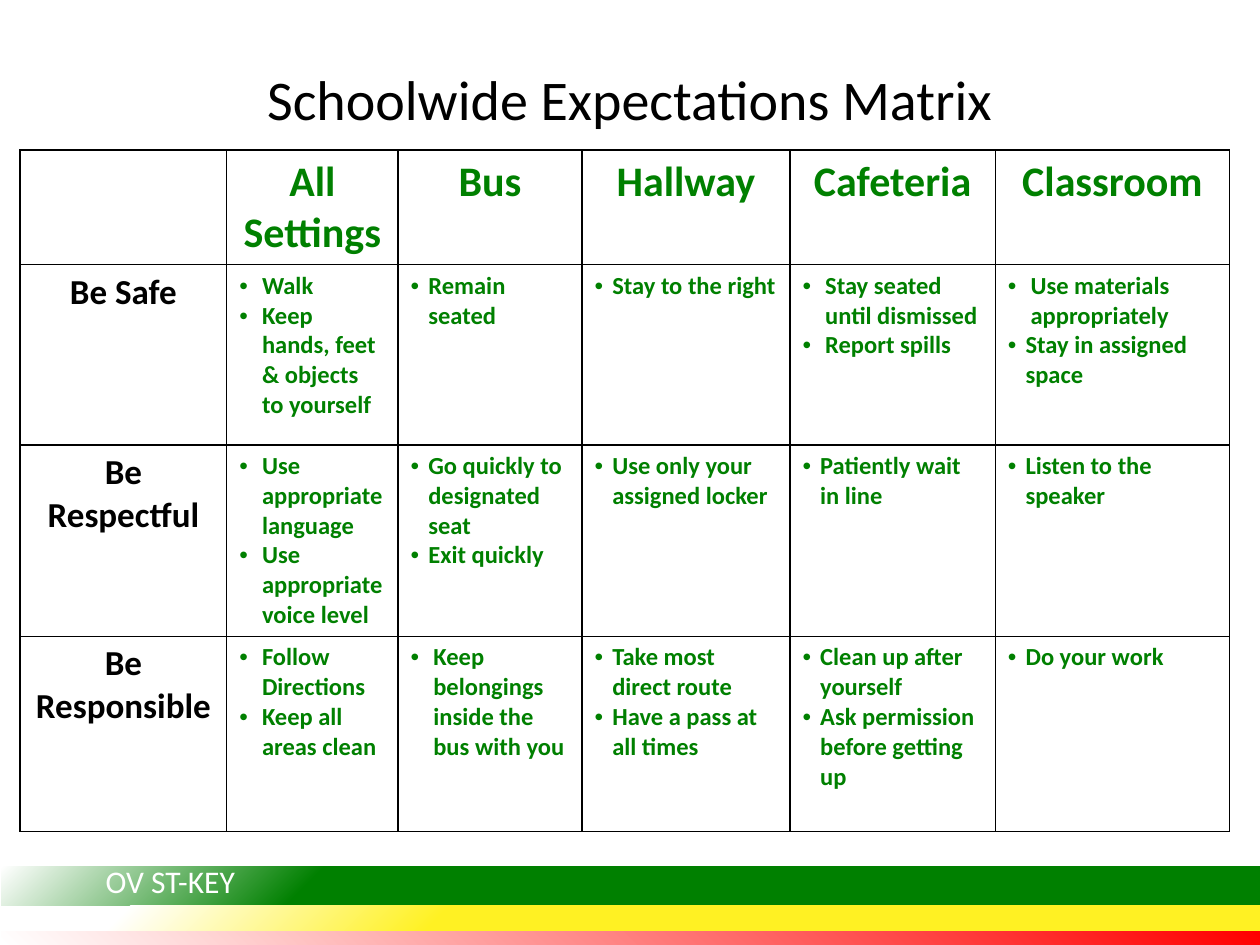
from dataclasses import dataclass

from pptx import Presentation
from pptx.dml.color import RGBColor as RGB
from pptx.enum.shapes import MSO_SHAPE as Shape
from pptx.enum.text import MSO_ANCHOR as Anchor, PP_ALIGN as Align
from pptx.oxml import parse_xml
from pptx.oxml.ns import nsdecls, qn
from pptx.util import Inches, Pt


@dataclass(frozen=True)
class Theme:
    font: str = "Calibri"
    black: str = "000000"
    white: str = "FFFFFF"
    green: str = "008000"
    yellow: str = "FFF123"
    red: str = "FF0000"
    title: int = 32
    heading: int = 24
    row_label: int = 20
    item: int = 14
    footer: int = 18
    border: float = 1


T = Theme()
WIDE, TIGHT = 0.18, 0.14  # bullet indents, inches


def wide(*texts):
    return [(WIDE, text) for text in texts]


def tight(*texts):
    return [(TIGHT, text) for text in texts]


COLUMNS = [1.64, 1.36, 1.46, 1.65, 1.63, 1.86]
ROWS = [0.91, 1.43, 1.52, 1.55]
SETTINGS = ["All Settings", "Bus", "Hallway", "Cafeteria", "Classroom"]
EXPECTATIONS = {
    "Be Safe": [
        wide("Walk", "Keep hands, feet & objects to yourself"),
        tight("Remain seated"),
        tight("Stay to the right"),
        wide("Stay seated until dismissed", "Report spills"),
        wide("Use materials appropriately") + tight("Stay in assigned space"),
    ],
    "Be Respectful": [
        wide("Use appropriate language", "Use appropriate voice level"),
        tight("Go quickly to designated seat", "Exit quickly"),
        tight("Use only your assigned locker"),
        tight("Patiently wait in line"),
        tight("Listen to the speaker"),
    ],
    "Be Responsible": [
        wide("Follow Directions", "Keep all areas clean"),
        wide("Keep belongings inside the bus with you"),
        tight("Take most direct route", "Have a pass at all times"),
        tight("Clean up after yourself", "Ask permission before getting up"),
        tight("Do your work"),
    ],
}


def write(p, text, size, color, bold=False, align=Align.LEFT):
    p.alignment = align
    r = p.add_run()
    r.text = text
    for name, value in dict(name=T.font, size=Pt(size), bold=bold).items():
        setattr(r.font, name, value)
    r.font.color.rgb = RGB.from_string(color)


def add_text(slide, box, text, size, color, align=Align.LEFT, anchor=Anchor.TOP):
    tf = slide.shapes.add_textbox(*map(Inches, box)).text_frame
    for name, value in dict(word_wrap=True, vertical_anchor=anchor).items():
        setattr(tf, name, value)
    write(tf.paragraphs[0], text, size, color, align=align)


def add_bullet(p, indent):
    pPr = p._p.get_or_add_pPr()
    pPr.set("marL", str(Inches(indent)))
    pPr.set("indent", str(-Inches(indent)))
    for xml in (
        f'<a:buClr {nsdecls("a")}><a:srgbClr val="{T.green}"/></a:buClr>',
        f'<a:buFont {nsdecls("a")} typeface="Arial"/>',
        f'<a:buChar {nsdecls("a")} char="•"/>',
    ):
        pPr.append(parse_xml(xml))


def style_cell(cell):
    """Give the cell its four borders and a plain fill."""
    tcPr = cell._tc.get_or_add_tcPr()
    for side in ("lnL", "lnR", "lnT", "lnB"):
        tcPr.append(parse_xml(
            f'<a:{side} {nsdecls("a")} w="{Pt(T.border)}"><a:solidFill>'
            f'<a:srgbClr val="{T.black}"/></a:solidFill></a:{side}>'))
    cell.fill.solid()
    cell.fill.fore_color.rgb = RGB.from_string(T.white)


def add_matrix(slide, left, top):
    box = (left, top, sum(COLUMNS), sum(ROWS))
    table = slide.shapes.add_table(
        len(ROWS), len(COLUMNS), *map(Inches, box)).table
    table.first_row = table.horz_banding = False
    for col, width in zip(table.columns, COLUMNS):
        col.width = Inches(width)
    for row, height in zip(table.rows, ROWS):
        row.height = Inches(height)
    for cell in table.iter_cells():
        style_cell(cell)

    for c, setting in enumerate(SETTINGS, 1):
        write(table.cell(0, c).text_frame.paragraphs[0], setting,
              T.heading, T.green, True, Align.CENTER)
    for r, (label, cells) in enumerate(EXPECTATIONS.items(), 1):
        write(table.cell(r, 0).text_frame.paragraphs[0], label,
              T.row_label, T.black, True, Align.CENTER)
        for c, items in enumerate(cells, 1):
            tf = table.cell(r, c).text_frame
            for i, (indent, text) in enumerate(items):
                p = tf.add_paragraph() if i else tf.paragraphs[0]
                write(p, text, T.item, T.green, True)
                add_bullet(p, indent)


def add_band(slide, box, color, solid, clear, focus):
    """Band that fades to white between two percentages, away from its focus."""
    sp = slide.shapes.add_shape(Shape.RECTANGLE, *map(Inches, box))
    sp.shadow.inherit = False
    sp.line.fill.background()
    sp.fill.gradient()
    stops = dict([(0, color), (solid, color), (clear, T.white), (100, T.white)])
    gs = "".join(f'<a:gs pos="{pos * 1000}"><a:srgbClr val="{c}"/></a:gs>'
                 for pos, c in stops.items())
    sides = " ".join(f'{side}="100000"' for side in focus)
    spPr = sp._element.spPr
    spPr.replace(spPr.find(qn("a:gradFill")), parse_xml(
        f'<a:gradFill {nsdecls("a")} rotWithShape="1"><a:gsLst>{gs}</a:gsLst>'
        f'<a:path path="circle"><a:fillToRect {sides}/></a:path></a:gradFill>'))


def add_footer(slide, left, top, width):
    bands = [  # height, colour, solid until, white from, focus corner
        (0.31, T.green, 75, 100, "lt"),
        (0.2, T.yellow, 65, 90, "lt"),
        (0.12, T.red, 0, 100, "lb"),
    ]
    y = top
    for height, *fade in bands:
        add_band(slide, (left, y, width, height), *fade)
        y += height
    add_text(slide, (left + 0.73, top - 0.09, 1.92, 0.4), "OV ST-KEY",
             T.footer, T.white)


def main():
    prs = Presentation()
    prs.slide_width, prs.slide_height = Inches(10), Inches(7.5)
    slide = prs.slides.add_slide(prs.slide_layouts[6])
    add_text(slide, (0.5, 0, 9, 1.55), "Schoolwide Expectations Matrix",
             T.title, T.black, Align.CENTER, Anchor.MIDDLE)
    add_matrix(slide, 0.16, 1.19)
    add_footer(slide, 0.01, 6.88, 10)
    prs.save("out.pptx")


if __name__ == "__main__":
    main()
